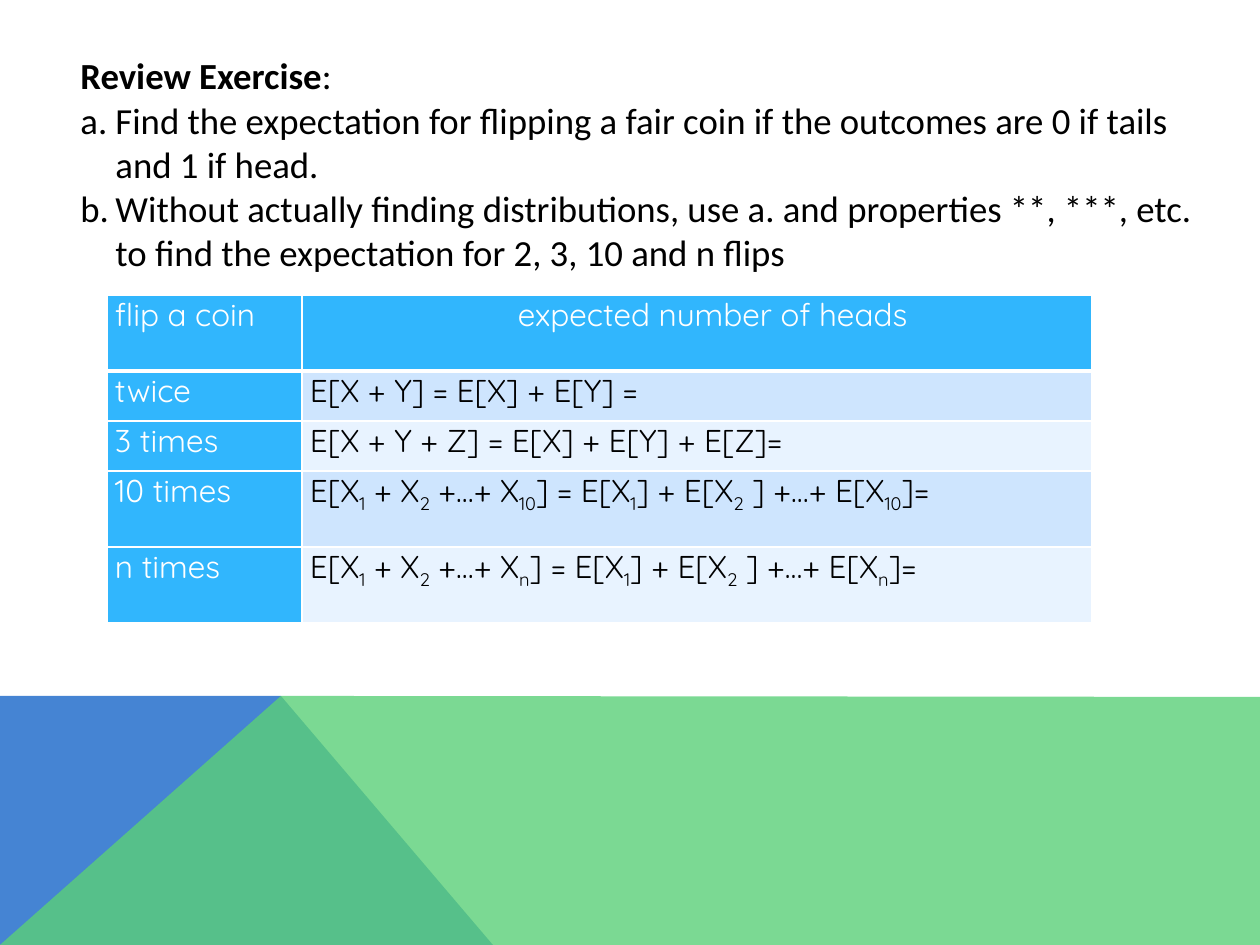
from dataclasses import dataclass

from lxml import etree
from pptx import Presentation
from pptx import util as u
from pptx.dml.color import RGBColor
from pptx.enum import text
from pptx.oxml.ns import qn

SCALE = 914400 / 126  # EMU in one px
WHITE, BLACK, BLUE = "FFFFFF", "000000", "31B6FD"
BANDS = "CEE5FE", "E8F3FF"


@dataclass
class Band:
    points: list[tuple[int, int]]
    fill: str
    alpha: int = 100


@dataclass
class Row:
    label: str
    sum: str  # every second part between bars is a subscript
    high: int


def px(n: int) -> u.Emu:
    return u.Emu(round(n * SCALE))


def color(code: str) -> RGBColor:
    return RGBColor.from_string(code)


def add_band(slide, band: Band) -> None:
    first, *rest = band.points
    pen = slide.shapes.build_freeform(*first, scale=SCALE)
    pen.add_line_segments(rest, close=True)
    shape = pen.convert_to_shape()
    shape.shadow.inherit = False
    shape.line.fill.background()
    shape.fill.solid()
    shape.fill.fore_color.rgb = color(band.fill)
    if band.alpha < 100:
        tint = shape._element.spPr.find(f".//{qn('a:srgbClr')}")
        etree.SubElement(tint, qn("a:alpha"), val=str(band.alpha * 1000))


def add_task(slide, head: str, items: list[str]) -> None:
    box = slide.shapes.add_textbox(px(68), px(47), px(1153), px(236))
    frame = box.text_frame
    frame.word_wrap = True
    title = frame.paragraphs[0]
    run = title.add_run()
    run.text = head
    run.font.bold = True
    title.add_run().text = ":"
    for item in items:
        para = frame.add_paragraph()
        props = para._p.get_or_add_pPr()
        props.set("marL", str(px(35)))
        props.set("indent", str(-px(35)))
        etree.SubElement(props, qn("a:buFont"), typeface="+mj-lt")
        etree.SubElement(props, qn("a:buAutoNum"), type="alphaLcPeriod")
        para.add_run().text = item
    for para in frame.paragraphs:
        para.font.name = "Calibri"
        para.font.size = u.Pt(21)
        para.font.color.rgb = color(BLACK)


def add_edges(cell, base: int) -> None:
    props = cell._tc.get_or_add_tcPr()
    for side, width in zip("LRTB", (1, 1, 1, base)):
        line = etree.SubElement(props, qn(f"a:ln{side}"), w=str(u.Pt(width)))
        fill = etree.SubElement(line, qn("a:solidFill"))
        etree.SubElement(fill, qn("a:srgbClr"), val=WHITE)


def fill_cell(cell, words: str, ink: str, fill: str, base: int) -> None:
    cell.margin_left = cell.margin_right = px(8)
    cell.margin_top = cell.margin_bottom = 0
    add_edges(cell, base)
    cell.fill.solid()
    cell.fill.fore_color.rgb = color(fill)
    para = cell.text_frame.paragraphs[0]
    for i, part in enumerate(words.split("|")):
        run = para.add_run()
        run.text = part
        run.font.name = "Quicksand"
        run.font.size = u.Pt(18)
        run.font.bold = False
        run.font.color.rgb = color(ink)
        if i % 2:
            run._r.get_or_add_rPr().set("baseline", "-25000")


def add_grid(slide, rows: list[Row], widths: tuple[int, int]) -> None:
    high = sum(row.high for row in rows)
    table = slide.shapes.add_table(
        len(rows), len(widths), px(107), px(295), px(sum(widths)), px(high)
    ).table
    for col, width in zip(table.columns, widths):
        col.width = px(width)
    for i, row in enumerate(rows):
        table.rows[i].height = px(row.high)
        base = 1 if i else 3
        ink, fill = (BLACK, BANDS[(i - 1) % 2]) if i else (WHITE, BLUE)
        fill_cell(table.cell(i, 0), row.label, WHITE, BLUE, base)
        fill_cell(table.cell(i, 1), row.sum, ink, fill, base)
    # Centred column heading
    para = table.cell(0, 1).text_frame.paragraphs[0]
    para.alignment = text.PP_ALIGN.CENTER
    para._p.get_or_add_pPr().set("marL", str(u.Inches(0.25)))


def long_sum(last: str) -> str:
    return f"E[X|1| + X|2| +…+ X|{last}|] = E[X|1|] + E[X|2| ] +…+ E[X|{last}|]="


BASE = [
    Band([(0, 945), (0, 696), (281, 696), (493, 945)], "4584D3"),
    Band([(0, 945), (281, 696), (1260, 697), (1260, 945)], "5BD078", 80),
]
TASKS = [
    "Find the expectation for flipping a fair coin if the outcomes are 0 if "
    "tails and 1 if head.",
    "Without actually finding distributions, use a. and properties **, ***, "
    "etc. to find the expectation for 2, 3, 10 and n flips",
]
ROWS = [
    Row("flip a coin", "expected number of heads", 76),
    Row("twice", "E[X + Y] = E[X] + E[Y] =", 50),
    Row("3 times", "E[X + Y + Z] = E[X] + E[Y] + E[Z]=", 50),
    Row("10 times", long_sum("10"), 76),
    Row("n times", long_sum("n"), 76),
]


def main() -> None:
    deck = Presentation()
    deck.slide_width, deck.slide_height = px(1260), px(945)
    slide = deck.slides.add_slide(deck.slide_layouts[6])
    # Coloured base
    for band in BASE:
        add_band(slide, band)
    # Exercise and its table
    add_task(slide, "Review Exercise", TASKS)
    add_grid(slide, ROWS, (195, 790))
    deck.save("out.pptx")


if __name__ == "__main__":
    main()
